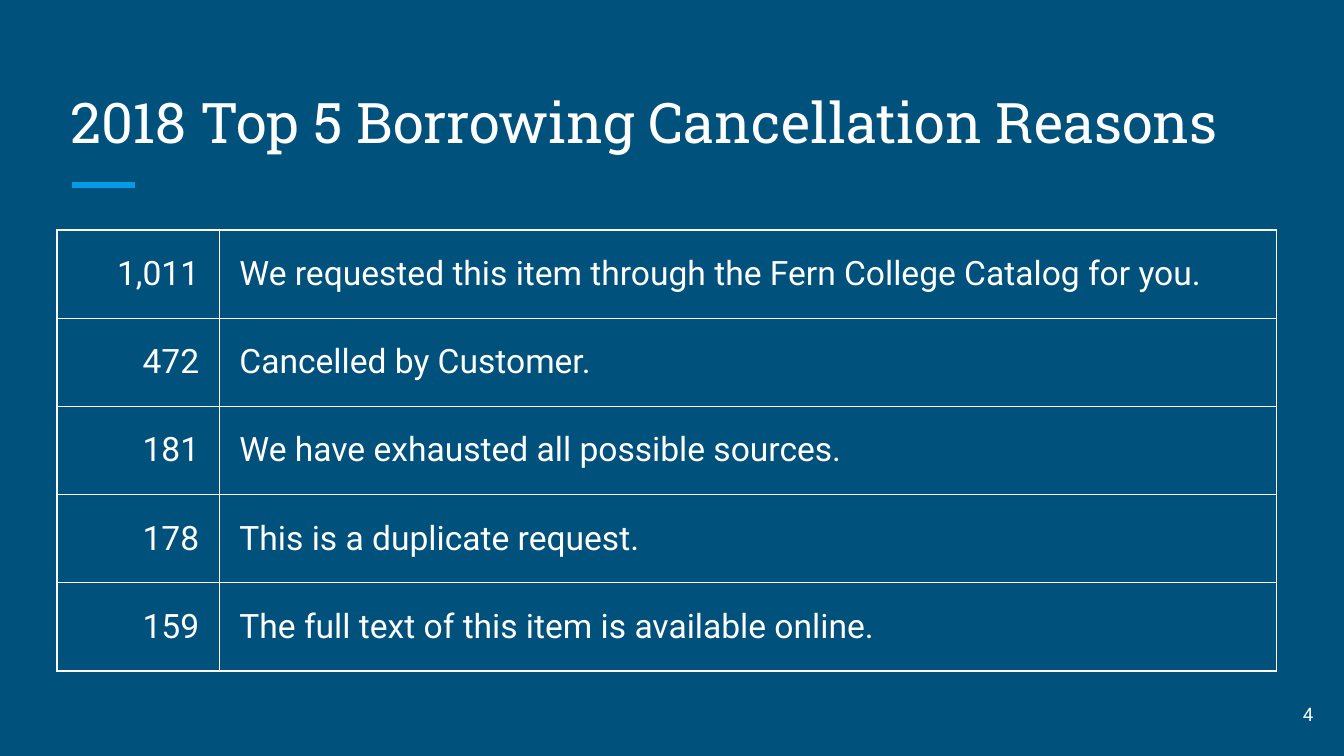
"""Build the slide of the top five borrowing cancellation reasons."""
from dataclasses import dataclass

from lxml import etree
from pptx import Presentation
from pptx.dml.color import RGBColor
from pptx.enum.shapes import MSO_CONNECTOR
from pptx.enum.text import MSO_ANCHOR, PP_ALIGN
from pptx.oxml.ns import qn
from pptx.slide import Slide
from pptx.table import _Cell
from pptx.text.text import TextFrame
from pptx.util import Pt

LEFT, RIGHT = PP_ALIGN.LEFT, PP_ALIGN.RIGHT
MIDDLE, BOTTOM = MSO_ANCHOR.MIDDLE, MSO_ANCHOR.BOTTOM
STRAIGHT = MSO_CONNECTOR.STRAIGHT

NAVY = RGBColor(0x00, 0x51, 0x7C)
SKY = RGBColor(0x03, 0x9B, 0xE5)
WHITE = RGBColor(0xFF, 0xFF, 0xFF)

TITLE_FONT = {"name": "Roboto Slab", "size": Pt(30)}
TABLE_FONT = {"name": "Roboto", "size": Pt(18)}
NUMBER_FONT = {"name": "Roboto", "size": Pt(10)}

TABLE_LEFT, TABLE_TOP = 30.5, 123.2
COLUMN_WIDTHS = (87, 566.2)
ROW_HEIGHT = 47.28
CELL_MARGIN = 10.8
BORDER_WIDTH = 0.75


@dataclass(frozen=True)
class Label:
    text: str
    left: float
    top: float
    width: float
    height: float
    font: dict
    align: PP_ALIGN
    anchor: MSO_ANCHOR


@dataclass(frozen=True)
class Reason:
    count: str
    text: str


LABELS = (
    Label("2018 Top 5 Borrowing Cancellation Reasons",
          30.5, 36, 659, 54, TITLE_FONT, LEFT, BOTTOM),
    Label("4", 667.5, 367.2, 43.2, 31, NUMBER_FONT, RIGHT, MIDDLE),
)

REASONS = (
    Reason("1,011", "We requested this item through the Fern College Catalog for you."),
    Reason("472", "Cancelled by Customer."),
    Reason("181", "We have exhausted all possible sources."),
    Reason("178", "This is a duplicate request."),
    Reason("159", "The full text of this item is available online."),
)


def write_text(tf: TextFrame, text: str, font: dict, align: PP_ALIGN) -> None:
    p = tf.paragraphs[0]
    p.alignment = align
    r = p.add_run()
    r.text = text
    for name, value in font.items():
        setattr(r.font, name, value)
    r.font.color.rgb = WHITE


def add_label(s: Slide, label: Label) -> None:
    box = (label.left, label.top, label.width, label.height)
    tf = s.shapes.add_textbox(*map(Pt, box)).text_frame
    tf.word_wrap = True
    tf.vertical_anchor = label.anchor
    for side in ("left", "top", "right", "bottom"):
        setattr(tf, f"margin_{side}", Pt(7.2))
    write_text(tf, label.text, label.font, label.align)


def add_accent(s: Slide) -> None:
    line = s.shapes.add_connector(STRAIGHT, Pt(38.6), Pt(99.1), Pt(72.3), Pt(99.1))
    line.line.color.rgb = SKY
    line.line.width = Pt(3)
    etree.SubElement(line._element.spPr, qn("a:effectLst"))


def format_cell(cell: _Cell) -> None:
    tc_pr = cell._tc.get_or_add_tcPr()
    for edge in ("lnL", "lnR", "lnT", "lnB"):
        ln = etree.SubElement(tc_pr, qn(f"a:{edge}"), w=str(Pt(BORDER_WIDTH)))
        fill = etree.SubElement(ln, qn("a:solidFill"))
        etree.SubElement(fill, qn("a:srgbClr"), val=str(WHITE))
    cell.fill.background()
    cell.vertical_anchor = MIDDLE
    for side in ("left", "top", "right", "bottom"):
        setattr(cell, f"margin_{side}", Pt(CELL_MARGIN))


def add_reason_table(s: Slide, reasons: tuple[Reason, ...]) -> None:
    table = s.shapes.add_table(
        len(reasons), len(COLUMN_WIDTHS), Pt(TABLE_LEFT), Pt(TABLE_TOP),
        Pt(sum(COLUMN_WIDTHS)), Pt(ROW_HEIGHT * len(reasons))).table
    table.first_row = table.horz_banding = False
    for column, width in zip(table.columns, COLUMN_WIDTHS):
        column.width = Pt(width)
    for i, reason in enumerate(reasons):
        table.rows[i].height = Pt(ROW_HEIGHT)
        for j, (text, align) in enumerate(((reason.count, RIGHT), (reason.text, LEFT))):
            cell = table.cell(i, j)
            format_cell(cell)
            write_text(cell.text_frame, text, TABLE_FONT, align)


def main() -> None:
    prs = Presentation()
    prs.slide_width, prs.slide_height = Pt(720), Pt(405)
    s = prs.slides.add_slide(prs.slide_layouts[6])
    s.background.fill.solid()
    s.background.fill.fore_color.rgb = NAVY
    add_accent(s)
    for label in LABELS:
        add_label(s, label)
    add_reason_table(s, REASONS)
    prs.save("out.pptx")


if __name__ == "__main__":
    main()
